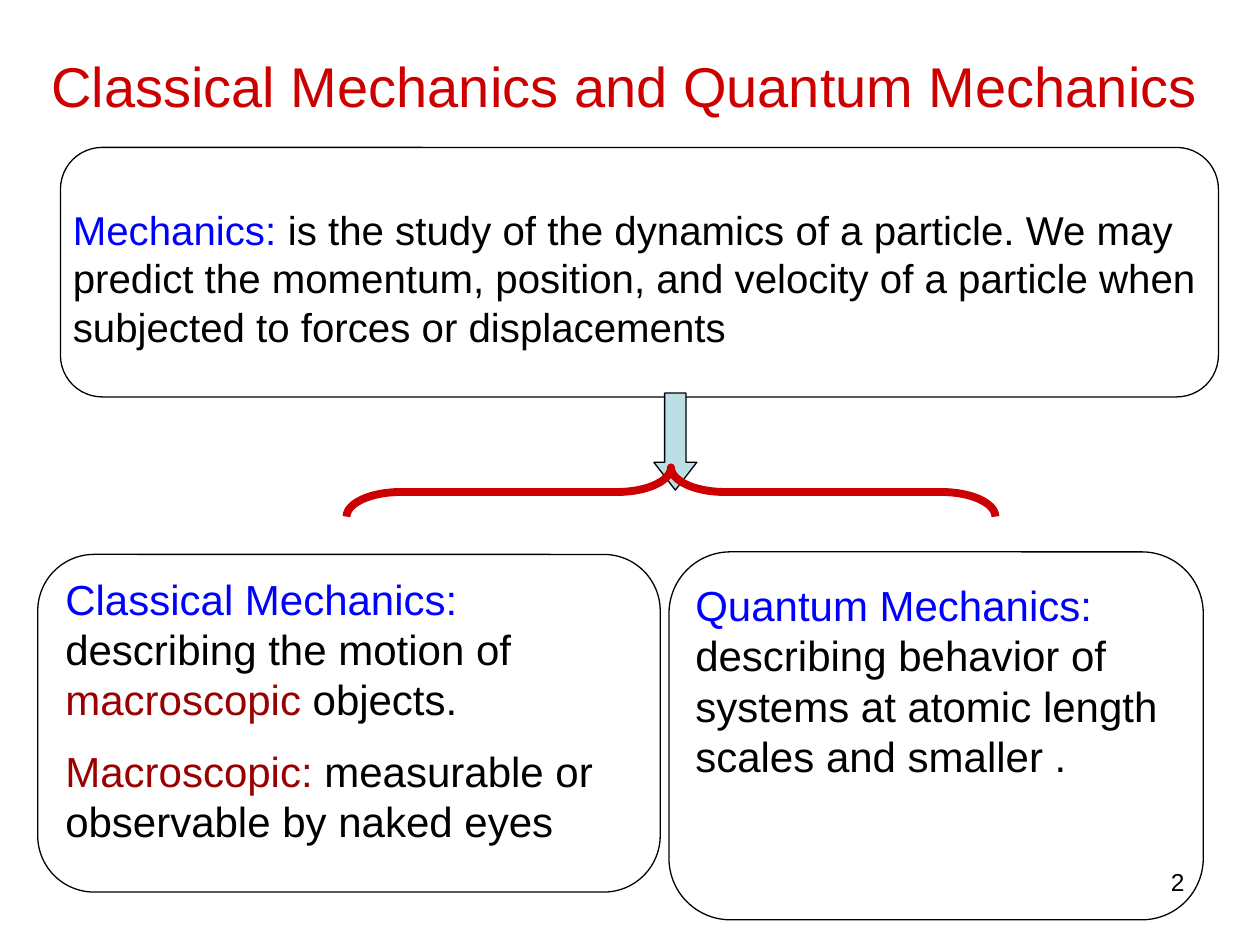
from dataclasses import dataclass

from pptx import Presentation
from pptx.dml.color import RGBColor
from pptx.enum.shapes import MSO_SHAPE
from pptx.enum.text import MSO_ANCHOR, PP_ALIGN
from pptx.util import Inches, Pt


@dataclass(frozen=True)
class Theme:
    font: str = "Arial"
    black: str = "000000"
    red: str = "CC0000"
    dark_red: str = "990000"
    blue: str = "0000FF"
    pale_blue: str = "BBE0E3"
    title_size: float = 32
    intro_size: float = 23
    body_size: float = 24
    number_size: float = 14
    thin_line: float = 0.75
    brace_line: float = 4.5


class SlideBuilder:
    def __init__(self, page, theme):
        self.page = page
        self.theme = theme

    def shape(self, kind, area, adjustments, line, width, fill=None, rotation=0):
        shape = self.page.shapes.add_shape(kind, *map(Inches, area))
        shape.shadow.inherit = False
        shape.rotation = rotation
        for index, value in enumerate(adjustments):
            shape.adjustments[index] = value
        if fill:
            shape.fill.solid()
            shape.fill.fore_color.rgb = RGBColor.from_string(fill)
        else:
            shape.fill.background()
        shape.line.color.rgb = RGBColor.from_string(line)
        shape.line.width = Pt(width)

    def frame(self, area):
        """Draw a rounded outline around a block of text."""
        self.shape(MSO_SHAPE.ROUNDED_RECTANGLE, area, [0.167],
                   self.theme.black, self.theme.thin_line)

    def text(self, area, size, paragraphs, align=PP_ALIGN.LEFT):
        """Add a text box; each paragraph is a list of (wording, colour) pairs."""
        box = self.page.shapes.add_textbox(*map(Inches, area))
        frame = box.text_frame
        frame.word_wrap = True
        frame.vertical_anchor = MSO_ANCHOR.TOP
        for index, spans in enumerate(paragraphs):
            para = frame.add_paragraph() if index else frame.paragraphs[0]
            para.alignment = align
            para.space_before = Pt(size / 2 if index else 0)
            for wording, colour in spans:
                span = para.add_run()
                span.text = wording
                span.font.color.rgb = RGBColor.from_string(colour)
                font_format = {"name": self.theme.font, "size": Pt(size)}
                for name, value in font_format.items():
                    setattr(span.font, name, value)


def main():
    deck = Presentation()
    deck.slide_width, deck.slide_height = Inches(10), Inches(7.5)
    theme = Theme()
    builder = SlideBuilder(deck.slides.add_slide(deck.slide_layouts[6]), theme)

    builder.text((7.17, 6.83, 2.33, 0.52), theme.number_size,
                 [[("2", theme.black)]], PP_ALIGN.RIGHT)
    builder.text((0.31, 0.36, 9.46, 0.63), theme.title_size,
                 [[("Classical Mechanics and Quantum Mechanics", theme.red)]])

    builder.frame((0.48, 1.17, 9.19, 1.98))
    builder.text((0.48, 1.58, 9.53, 1.28), theme.intro_size, [[
        ("Mechanics:", theme.blue),
        (" is the study of the dynamics of a particle. We may predict the "
         "momentum, position, and velocity of a particle when subjected to "
         "forces or displacements", theme.black),
    ]])

    builder.shape(MSO_SHAPE.DOWN_ARROW, (5.19, 3.12, 0.34, 0.77), [0.5, 0.648],
                  theme.black, theme.thin_line, fill=theme.pale_blue)

    builder.frame((0.3, 4.4, 4.94, 2.68))
    builder.text((0.42, 4.5, 4.73, 2.73), theme.body_size, [
        [("Classical Mechanics:", theme.blue),
         (" describing the motion of ", theme.black),
         ("macroscopic", theme.dark_red),
         (" objects.", theme.black)],
        [("Macroscopic: ", theme.dark_red),
         ("measurable or observable by naked eyes", theme.black)],
    ])

    builder.shape(MSO_SHAPE.LEFT_BRACE, (5.13, 1.33, 0.39, 5.15), [1.104, 0.5],
                  theme.red, theme.brace_line, rotation=90)

    builder.frame((5.31, 4.38, 4.24, 2.92))
    builder.text((5.42, 4.55, 4.06, 2.95), theme.body_size, [[
        ("Quantum Mechanics:", theme.blue),
        (" describing behavior of systems at atomic length scales and smaller .",
         theme.black),
    ]])

    deck.save("out.pptx")


if __name__ == "__main__":
    main()
